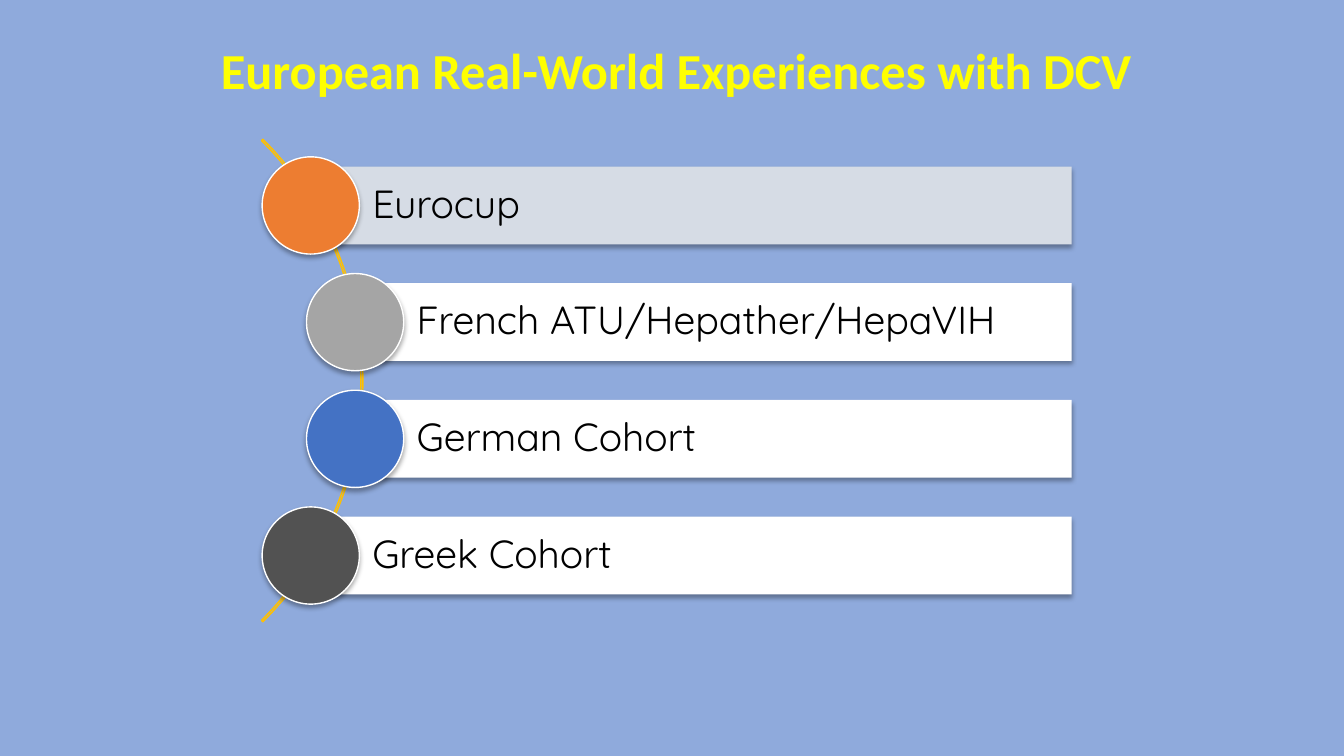
from pptx import Presentation
from pptx.dml.color import RGBColor
from pptx.enum.shapes import MSO_SHAPE as Shape
from pptx.enum.text import MSO_ANCHOR as Anchor, PP_ALIGN as Align
from pptx.oxml import parse_xml
from pptx.oxml.ns import nsdecls
from pptx.util import Inches, Pt

SKY = RGBColor(0x8F, 0xAA, 0xDC)
YELLOW = RGBColor(0xFF, 0xFF, 0x00)
GOLD = RGBColor(0xFF, 0xC0, 0x00)
PALE = RGBColor(0xD6, 0xDC, 0xE5)
WHITE = RGBColor(0xFF, 0xFF, 0xFF)
BLACK = RGBColor(0x00, 0x00, 0x00)
ORANGE = RGBColor(0xED, 0x7D, 0x31)
GRAY = RGBColor(0xA5, 0xA5, 0xA5)
BLUE = RGBColor(0x44, 0x72, 0xC4)
CHARCOAL = RGBColor(0x52, 0x52, 0x52)

# Label, bar colour, circle colour, indent of the row along the arc
COHORTS = [
    ("Eurocup", PALE, ORANGE, 0),
    ("French ATU/Hepather/HepaVIH", WHITE, GRAY, 0.44),
    ("German Cohort", WHITE, BLUE, 0.44),
    ("Greek Cohort", WHITE, CHARCOAL, 0),
]
ARC_DIAMETER = 6.77
ARC_OVERHANG = 1.0  # how far the arc bulges past the left edge of the list


def add_part(page, kind, left, top, width, height, fill=None, line=None):
    part = page.shapes.add_shape(
        kind, Inches(left), Inches(top), Inches(width), Inches(height))
    part.shadow.inherit = False
    if fill is None:
        part.fill.background()
    else:
        part.fill.solid()
        part.fill.fore_color.rgb = fill
    if line is None:
        part.line.fill.background()
    else:
        part.line.color.rgb = line
        part.line.width = Pt(1)
    return part


def add_soft_shadow(part):
    effects = part.element.spPr.find(
        "{http://schemas.openxmlformats.org/drawingml/2006/main}effectLst")
    effects.append(parse_xml(
        f'<a:outerShdw {nsdecls("a")} blurRad="{Pt(3.5)}" dist="{Pt(2.2)}" '
        'dir="5400000" algn="ctr" rotWithShape="0">'
        '<a:srgbClr val="000000"><a:alpha val="32000"/></a:srgbClr>'
        '</a:outerShdw>'))


def add_title(page, left, top, width, height):
    title = page.shapes.title
    title.left, title.top = Inches(left), Inches(top)
    title.width, title.height = Inches(width), Inches(height)
    frame = title.text_frame
    frame.text = "European Real-World Experiences with DCV"
    frame.vertical_anchor = Anchor.MIDDLE
    para = frame.paragraphs[0]
    para.alignment = Align.CENTER
    para.line_spacing = 0.9
    para.font.name, para.font.size = "Calibri", Pt(36)
    para.font.bold = True
    para.font.color.rgb = YELLOW


def add_label(bar, label, inset):
    frame = bar.text_frame
    frame.word_wrap = True
    frame.vertical_anchor = Anchor.MIDDLE
    frame.margin_left = Inches(inset)
    frame.margin_right = frame.margin_top = frame.margin_bottom = Inches(0.08)
    frame.text = label
    para = frame.paragraphs[0]
    para.alignment = Align.LEFT
    para.line_spacing = 0.9
    para.font.name, para.font.size = "Quicksand", Pt(28)
    para.font.color.rgb = BLACK


def add_cohort_list(page, left, top, width, height):
    row = height / len(COHORTS)
    bar_height, circle = row * 2 / 3, row * 5 / 6

    # Arc behind the rows, from 315 to 45 degrees
    arc = add_part(page, Shape.BLOCK_ARC, left + ARC_OVERHANG - ARC_DIAMETER,
                   top + (height - ARC_DIAMETER) / 2,
                   ARC_DIAMETER, ARC_DIAMETER, line=GOLD)
    for index, value in enumerate((189, 27, 0.003)):
        arc.adjustments[index] = value

    # Each bar starts at the centre of its circle
    for index, (label, bar_color, circle_color, indent) in enumerate(COHORTS):
        middle = top + (index + 0.5) * row
        start = indent + circle / 2
        bar = add_part(page, Shape.RECTANGLE, left + start,
                       middle - bar_height / 2, width - start, bar_height,
                       fill=bar_color)
        add_label(bar, label, inset=0.61)
        dot = add_part(page, Shape.OVAL, left + indent, middle - circle / 2,
                       circle, circle, fill=circle_color, line=WHITE)
        add_soft_shadow(bar)
        add_soft_shadow(dot)


def main():
    deck = Presentation()
    deck.slide_width, deck.slide_height = Inches(13.33), Inches(7.5)
    page = deck.slides.add_slide(deck.slide_layouts[5])
    page.background.fill.solid()
    page.background.fill.fore_color.rgb = SKY
    add_title(page, 0.43, 0, 12.56, 1.45)
    add_cohort_list(page, 2.6, 1.46, 8.03, 4.63)
    deck.save("out.pptx")


if __name__ == "__main__":
    main()
